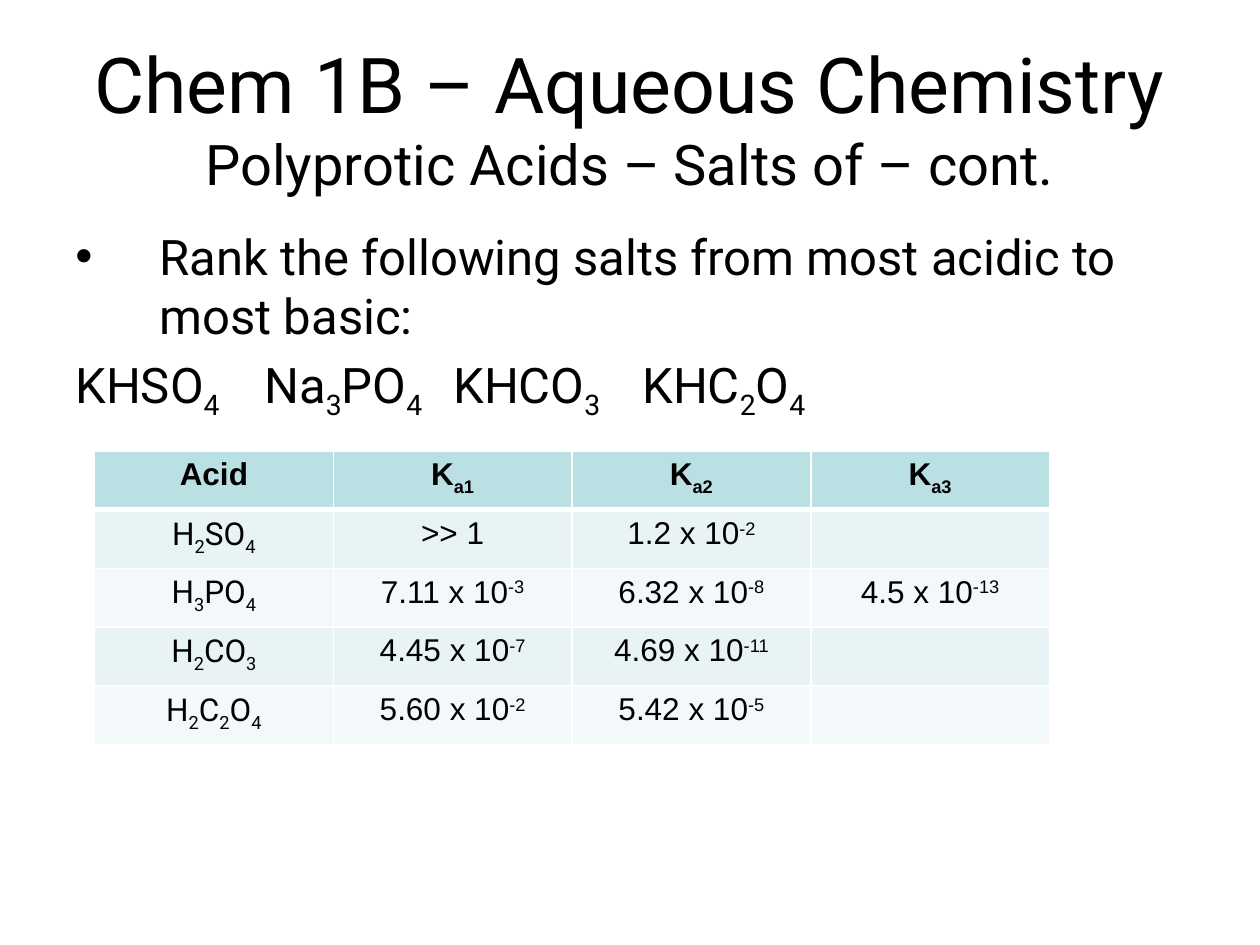
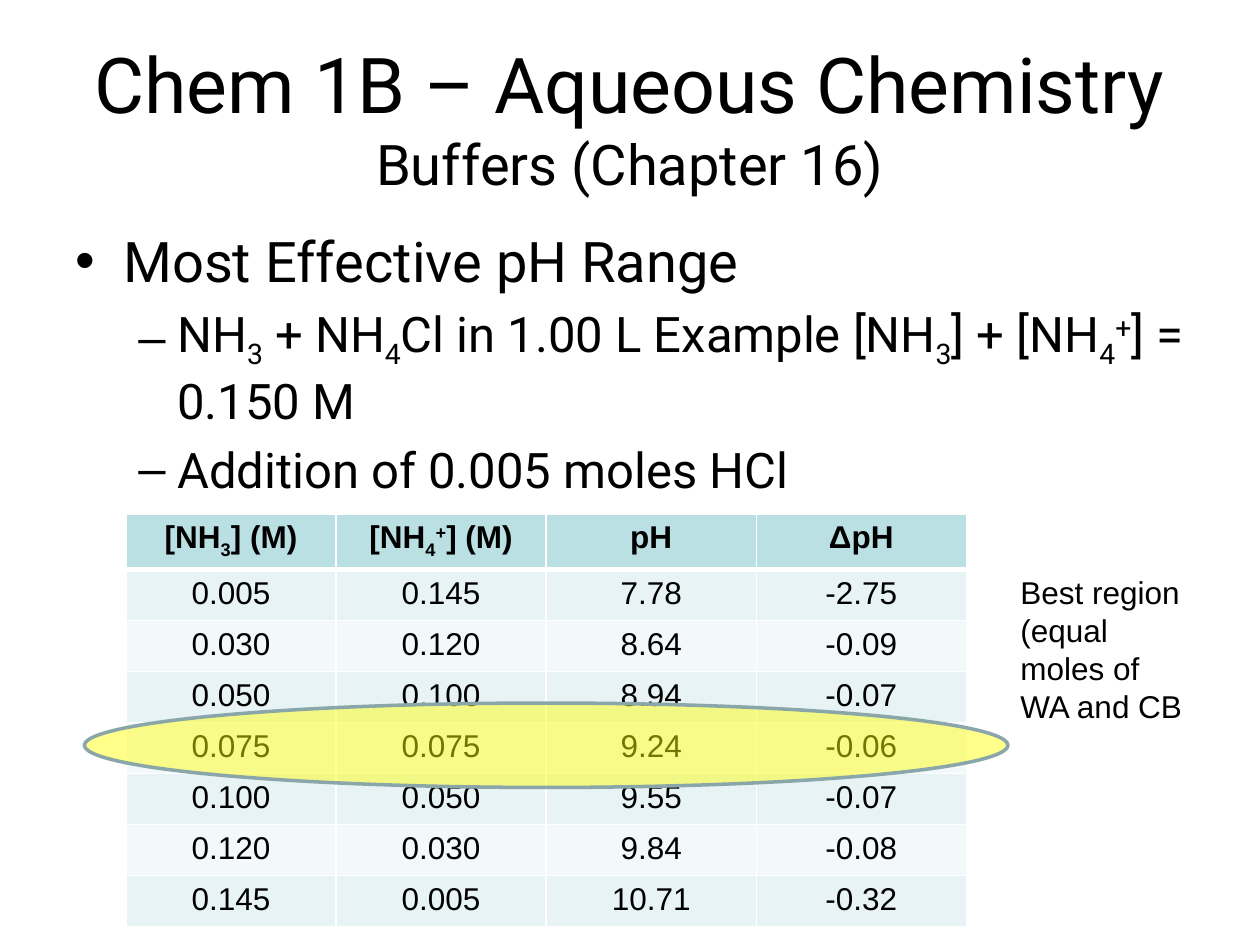
"""Build two chemistry slides: ranking salts and the best buffer range."""
from lxml import etree
from pptx import Presentation
from pptx import util as u
from pptx.dml.color import RGBColor
from pptx.enum import shapes, text
from pptx.oxml import ns

BLACK = RGBColor(0x00, 0x00, 0x00)
WHITE = RGBColor(0xFF, 0xFF, 0xFF)
HEAD = RGBColor(0xBB, 0xE0, 0xE3)
BANDS = (RGBColor(0xE7, 0xF3, 0xF4), RGBColor(0xF3, 0xF9, 0xFA))
YELLOW = RGBColor(0xFF, 0xFF, 0x00)
GREY = RGBColor(0x8A, 0xA6, 0xA8)
SANS, PLAIN = "Roboto", "Arial"
COURSE = "Chem 1B – Aqueous Chemistry"
SHIFTS = {"~": -25000, "^": 30000}

ACIDS = [
    ["Acid", "K~a1~", "K~a2~", "K~a3~"],
    ["H~2~SO~4~", ">> 1", "1.2 x 10^-2^", ""],
    ["H~3~PO~4~", "7.11 x 10^-3^", "6.32 x 10^-8^", "4.5 x 10^-13^"],
    ["H~2~CO~3~", "4.45 x 10^-7^", "4.69 x 10^-11^", ""],
    ["H~2~C~2~O~4~", "5.60 x 10^-2^", "5.42 x 10^-5^", ""],
]
BUFFERS = [
    ["[NH~3~] (M)", "[NH~4~^+^] (M)", "pH", "ΔpH"],
    ["0.005", "0.145", "7.78", "-2.75"],
    ["0.030", "0.120", "8.64", "-0.09"],
    ["0.050", "0.100", "8.94", "-0.07"],
    ["0.075", "0.075", "9.24", "-0.06"],
    ["0.100", "0.050", "9.55", "-0.07"],
    ["0.120", "0.030", "9.84", "-0.08"],
    ["0.145", "0.005", "10.71", "-0.32"],
]


def put(item, vals):
    """Set each named value on an object."""
    for name, val in vals.items():
        setattr(item, name, val)


def node(root, tag, **vals):
    """Append a drawing element with the given values."""
    part = etree.SubElement(root, ns.qn("a:" + tag))
    for name, val in vals.items():
        part.set(name, str(val))
    return part


def write(par, words, size, face=SANS, bold=False):
    """Add runs, with ~ around subscripts and ^ around superscripts."""
    shift = 0
    for mark in SHIFTS:
        words = words.replace(mark, "|" + mark)
    for piece in words.split("|"):
        if piece[:1] in SHIFTS:
            shift = 0 if shift else SHIFTS[piece[0]]
            piece = piece[1:]
        if not piece:
            continue
        run = par.add_run()
        run.text = piece
        put(run.font, {"size": u.Pt(size), "name": face, "bold": bold})
        run.font.color.rgb = BLACK
        if shift:
            run.font._element.set("baseline", str(shift))


def add_box(slide, *area):
    """Add a wrapping text box and return its frame."""
    frame = slide.shapes.add_textbox(*map(u.Inches, area)).text_frame
    frame.word_wrap = True
    return frame


def add_title(slide, topic):
    """Add the course name with the topic below it."""
    frame = add_box(slide, 0.5, 0.3, 9, 1.25)
    frame.vertical_anchor = text.MSO_ANCHOR.MIDDLE
    par = frame.paragraphs[0]
    par.alignment = text.PP_ALIGN.CENTER
    write(par, COURSE, 44)
    par.add_line_break()
    write(par, topic, 32)


def add_body(slide, height, items):
    """Add body lines given as words, size, level, indent, hang, bullet, tabs."""
    frame = add_box(slide, 0.5, 1.75, 9, height)
    for num, (words, size, level, left, hang, mark, tabs) in enumerate(items):
        par = frame.add_paragraph() if num else frame.paragraphs[0]
        par.level = level
        props = par._p.get_or_add_pPr()
        props.set("marL", str(u.Inches(left)))
        props.set("indent", str(-u.Inches(hang)))
        node(node(props, "spcBef"), "spcPct", val=20000)
        if mark:
            node(props, "buFont", typeface=PLAIN)
            node(props, "buChar", char=mark)
        if tabs:
            stops = node(props, "tabLst")
            for stop in tabs:
                node(stops, "tab", pos=u.Inches(stop), algn="l")
        write(par, words, size)


def add_edges(cell, row):
    """Draw white cell borders, thick below the header."""
    props = cell._tc.get_or_add_tcPr()
    thick = {("B", 0), ("T", 1)}
    for side in "LRTB":
        width = u.Pt(3 if (side, row) in thick else 1)
        line = node(props, "ln" + side, w=width)
        node(node(line, "solidFill"), "srgbClr", val=WHITE)


def add_grid(slide, area, rows, first=PLAIN):
    """Add a banded table; first is the font of the first column's data."""
    frame = slide.shapes.add_table(len(rows), len(rows[0]), *map(u.Inches, area))
    for y, row in enumerate(rows):
        for x, words in enumerate(row):
            cell = frame.table.cell(y, x)
            add_edges(cell, y)
            cell.fill.solid()
            cell.fill.fore_color.rgb = BANDS[(y - 1) % 2] if y else HEAD
            par = cell.text_frame.paragraphs[0]
            put(par, {"alignment": text.PP_ALIGN.CENTER})
            par.font.size = u.Pt(18)
            write(par, words, 18, first if y and not x else PLAIN, y == 0)


def add_ring(slide, *area):
    """Add a see-through yellow ellipse."""
    ring = slide.shapes.add_shape(shapes.MSO_SHAPE.OVAL, *map(u.Inches, area))
    ring.shadow.inherit = False
    ring.fill.solid()
    ring.fill.fore_color.rgb = YELLOW
    tint = ring._element.spPr.find(".//" + ns.qn("a:srgbClr"))
    node(tint, "alpha", val=46000)
    ring.line.color.rgb = GREY
    ring.line.width = u.Pt(2)


def add_note(slide, words, *area):
    """Add a small side note."""
    frame = add_box(slide, *area)
    frame.auto_size = text.MSO_AUTO_SIZE.SHAPE_TO_FIT_TEXT
    write(frame.paragraphs[0], words, 18, PLAIN)


def add_salts(slide):
    """Fill the slide on ranking salts."""
    add_title(slide, "Polyprotic Acids – Salts of – cont.")
    add_body(slide, 2.33, [
        ("Rank the following salts from most acidic to most basic:",
         28, 0, 0.67, 0.67, "•", ()),
        ("KHSO~4~\tNa~3~PO~4~\tKHCO~3~\tKHC~2~O~4~",
         28, 0, 0, 0, "", (2, 4, 6)),
    ])
    add_grid(slide, (0.75, 3.58, 7.58, 2.33), ACIDS, SANS)


def add_range(slide):
    """Fill the slide on the best buffer range."""
    add_title(slide, "Buffers (Chapter 16)")
    dash = (28, 1, 0.81, 0.31, "–", ())
    add_body(slide, 1.17, [
        ("Most Effective pH Range", 32, 0, 0.38, 0.38, "•", ()),
        ("NH~3~ + NH~4~Cl in 1.00 L Example [NH~3~] + [NH~4~^+^] = 0.150 M", *dash),
        ("Addition of 0.005 moles HCl", *dash),
    ])
    add_grid(slide, (1, 4.08, 6.67, 3.24), BUFFERS)
    add_ring(slide, 0.67, 5.58, 7.33, 0.67)
    add_note(slide, "Best region (equal moles of WA and CB", 8, 4.5, 1.58, 1.31)


def main():
    """Build and save the deck."""
    deck = Presentation()
    put(deck, {"slide_width": u.Inches(10), "slide_height": u.Inches(7.5)})
    for fill in (add_salts, add_range):
        fill(deck.slides.add_slide(deck.slide_layouts[6]))
    deck.save("out.pptx")


if __name__ == "__main__":
    main()
